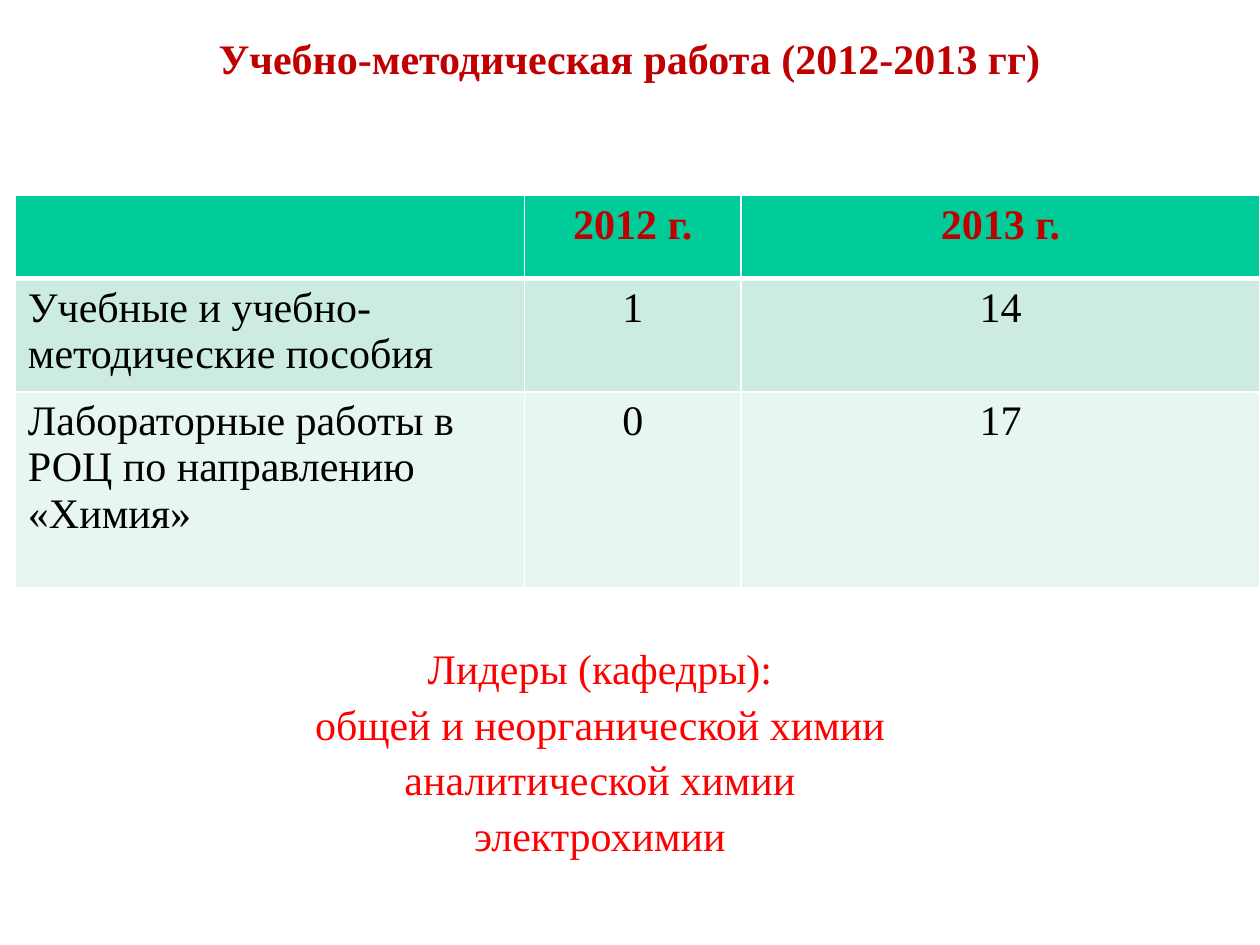
from dataclasses import dataclass

from lxml import etree
from pptx import Presentation
from pptx.dml.color import RGBColor
from pptx.enum.text import MSO_ANCHOR, MSO_AUTO_SIZE, PP_ALIGN
from pptx.oxml.ns import qn
from pptx.util import Cm, Pt

CENTER, LEFT = PP_ALIGN.CENTER, PP_ALIGN.LEFT
TOP = MSO_ANCHOR.TOP
FIXED = MSO_AUTO_SIZE.NONE


@dataclass(frozen=True)
class Theme:
    font: str = "Times New Roman"
    size: int = 24
    title: str = "C00000"
    text: str = "000000"
    accent: str = "FF0000"
    line: str = "FFFFFF"
    fills: tuple = ("00CC99", "CBECDE", "E7F6EF")
    thin: int = 1
    thick: int = 3


THEME = Theme()

TITLE = "Учебно-методическая работа (2012-2013 гг)"
ROWS = [
    ["", "2012 г.", "2013 г."],
    ["Учебные и учебно-методические пособия", "1", "14"],
    ["Лабораторные работы в РОЦ по направлению «Химия»", "0", "17"],
]
LEADERS = [
    "Лидеры (кафедры):",
    "общей и неорганической химии",
    "аналитической химии",
    "электрохимии",
]


def style(frame, color, bold=False, align=CENTER):
    for para in frame.paragraphs:
        para.alignment = align
        for font in [para.font] + [run.font for run in para.runs]:
            font.name = THEME.font
            font.size = Pt(THEME.size)
            font.bold = bold
            font.color.rgb = RGBColor.from_string(color)


def place(shape, box):
    shape.left, shape.top, shape.width, shape.height = (Cm(n) for n in box)
    frame = shape.text_frame
    frame.word_wrap = True
    frame.auto_size = FIXED
    frame.vertical_anchor = TOP
    return frame


def add_title(slide, box):
    frame = place(slide.shapes.title, box)
    frame.text = TITLE
    style(frame, THEME.title, bold=True)


def edge(cell, side, width):
    props = cell._tc.get_or_add_tcPr()
    line = etree.SubElement(props, qn(f"a:{side}"), w=str(Pt(width)))
    fill = etree.SubElement(line, qn("a:solidFill"))
    etree.SubElement(fill, qn("a:srgbClr"), val=THEME.line)


def add_grid(slide, box, widths, heights):
    shape = slide.shapes.add_table(len(ROWS), len(ROWS[0]), *(Cm(n) for n in box))
    table = shape.table
    for col, width in zip(table.columns, widths):
        col.width = Cm(width)
    for row, height in zip(table.rows, heights):
        row.height = Cm(height)
    for i, texts in enumerate(ROWS):
        head = i == 0
        for j, text in enumerate(texts):
            cell = table.cell(i, j)
            cell.text_frame.text = text
            style(cell.text_frame, THEME.title if head else THEME.text,
                  bold=head, align=CENTER if head or j else LEFT)
            for side in ("lnL", "lnR", "lnT", "lnB"):
                heavy = (i, side) in ((0, "lnB"), (1, "lnT"))
                edge(cell, side, THEME.thick if heavy else THEME.thin)
            cell.fill.solid()
            cell.fill.fore_color.rgb = RGBColor.from_string(THEME.fills[i])


def add_leaders(slide, box):
    frame = place(slide.placeholders[1], box)
    frame.text = "\n".join(LEADERS)
    style(frame, THEME.accent)
    for para in frame.paragraphs:
        para.space_before = Pt(0)
        para.line_spacing = 1.1
        props = para._p.get_or_add_pPr()
        props.set("marL", "0")
        props.set("indent", "0")
        etree.SubElement(props, qn("a:buNone"))
        props.append(props.find(qn("a:defRPr")))


def main():
    deck = Presentation()
    deck.slide_width, deck.slide_height = Cm(25.4), Cm(19.05)
    slide = deck.slides.add_slide(deck.slide_layouts[1])
    add_title(slide, (0.69, 0.53, 24, 4.32))
    add_grid(slide, (0.31, 3.94, 25.09, 7.9),
             widths=(10.26, 4.37, 10.46), heights=(1.68, 2.28, 3.94))
    add_leaders(slide, (0.69, 12.73, 22.81, 4.37))
    deck.save("out.pptx")


if __name__ == "__main__":
    main()
